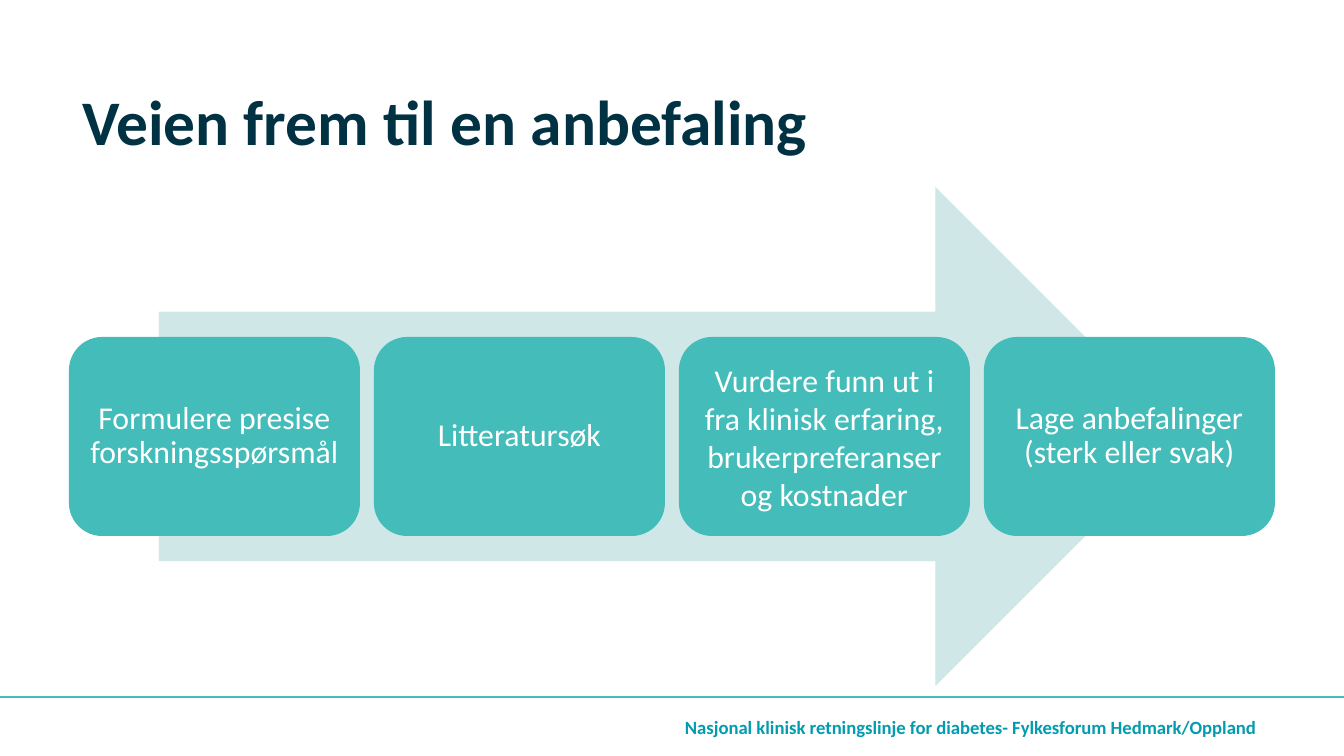
from dataclasses import dataclass

from lxml import etree
from pptx import Presentation
from pptx.dml.color import RGBColor
from pptx.enum.shapes import MSO_CONNECTOR, MSO_SHAPE
from pptx.enum.text import MSO_ANCHOR, PP_ALIGN
from pptx.oxml.ns import qn
from pptx.util import Emu, Pt

STRAIGHT = MSO_CONNECTOR.STRAIGHT
RIGHT_ARROW = MSO_SHAPE.RIGHT_ARROW
ROUNDED_BOX = MSO_SHAPE.ROUNDED_RECTANGLE
MIDDLE = MSO_ANCHOR.MIDDLE
BOTTOM = MSO_ANCHOR.BOTTOM
LEFT = PP_ALIGN.LEFT
CENTER = PP_ALIGN.CENTER

PIXELS_PER_INCH = 134.4
PAGE_WIDTH, PAGE_HEIGHT = 1344, 756
STEP_LEFT, STEP_TOP = 69, 337
STEP_WIDTH, STEP_HEIGHT = 291, 199
STEP_PITCH = 305

STEPS = [
    ("Formulere presise forskningsspørsmål", 0.9),
    ("Litteratursøk", 0.9),
    ("Vurdere funn ut i fra klinisk erfaring, brukerpreferanser og kostnader", 1.0),
    ("Lage anbefalinger\n(sterk eller svak)", 0.9),
]


@dataclass(frozen=True)
class Theme:
    font: str = "Calibri"
    title_color: str = "003244"
    accent: str = "43BCBA"
    arrow_color: str = "CFE7E7"
    step_text: str = "FFFFFF"
    footer_color: str = "039BAF"
    title_size: int = 34
    step_size: int = 17
    footer_size: int = 10


THEME = Theme()


def px(value):
    return Emu(round(value * 914400 / PIXELS_PER_INCH))


def write_text(box, text, *, size, color, bold=False, align=LEFT,
               anchor=MIDDLE, spacing=1.0, inset=(13, 7)):
    frame = box.text_frame
    frame.word_wrap = True
    frame.vertical_anchor = anchor
    frame.margin_left = frame.margin_right = px(inset[0])
    frame.margin_top = frame.margin_bottom = px(inset[1])
    para = frame.paragraphs[0]
    para.text = text
    para.alignment = align
    para.line_spacing = spacing
    for span in para.runs:
        span.font.name = THEME.font
        span.font.size = Pt(size)
        span.font.bold = bold
        span.font.color.rgb = RGBColor.from_string(color)


def add_text(page, area, text, **text_format):
    box = page.shapes.add_textbox(*map(px, area))
    write_text(box, text, **text_format)


def add_filled_shape(page, kind, area, color):
    shape = page.shapes.add_shape(kind, *map(px, area))
    shape.shadow.inherit = False
    shape.fill.solid()
    shape.fill.fore_color.rgb = RGBColor.from_string(color)
    shape.line.fill.background()
    return shape


def add_footer_rule(page, top):
    rule = page.shapes.add_connector(STRAIGHT, 0, px(top), px(PAGE_WIDTH), px(top))
    rule.line.color.rgb = RGBColor.from_string(THEME.accent)
    rule.line.width = Pt(1)
    etree.SubElement(rule._element.spPr, qn("a:effectLst"))


def add_steps(page):
    for index, (text, spacing) in enumerate(STEPS):
        area = (STEP_LEFT + index * STEP_PITCH, STEP_TOP, STEP_WIDTH, STEP_HEIGHT)
        step = add_filled_shape(page, ROUNDED_BOX, area, THEME.accent)
        write_text(step, text, size=THEME.step_size, color=THEME.step_text,
                   align=CENTER, spacing=spacing, inset=(9, 9))


def main():
    deck = Presentation()
    deck.slide_width, deck.slide_height = px(PAGE_WIDTH), px(PAGE_HEIGHT)
    page = deck.slides.add_slide(deck.slide_layouts[6])

    add_footer_rule(page, 697)
    add_text(page, (69, 74, 1207, 91), "Veien frem til en anbefaling",
             size=THEME.title_size, color=THEME.title_color, bold=True, anchor=BOTTOM)
    add_filled_shape(page, RIGHT_ARROW, (159, 187, 1026, 499), THEME.arrow_color)
    add_steps(page)
    add_text(page, (672, 706, 634, 43),
             "Nasjonal klinisk retningslinje for diabetes- Fylkesforum Hedmark/Oppland",
             size=THEME.footer_size, color=THEME.footer_color, bold=True)

    deck.save("out.pptx")


if __name__ == "__main__":
    main()
